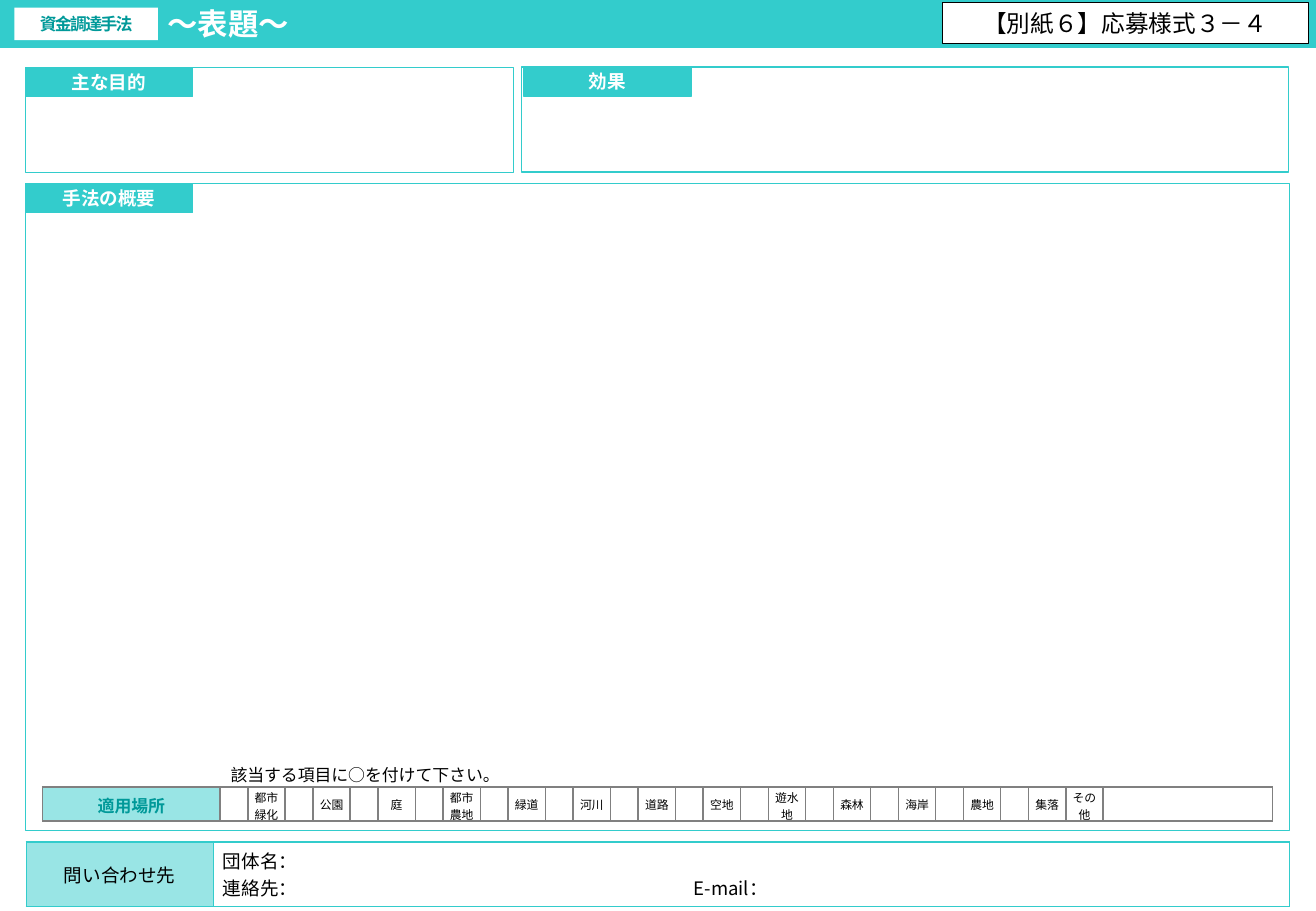
from lxml import etree
from pptx import Presentation
from pptx.dml.color import RGBColor
from pptx.enum.shapes import MSO_SHAPE
from pptx.enum.text import MSO_ANCHOR, PP_ALIGN
from pptx.oxml.ns import qn
from pptx.util import Cm, Pt

RECTANGLE = MSO_SHAPE.RECTANGLE
MIDDLE = MSO_ANCHOR.MIDDLE
LEFT, CENTER = PP_ALIGN.LEFT, PP_ALIGN.CENTER
FONT = "Noto Sans CJK JP"
TURQUOISE = RGBColor(0x33, 0xCC, 0xCC)
PALE = RGBColor(0x99, 0xE5, 0xE5)
TEAL = RGBColor(0x00, 0x99, 0x99)
GREY = RGBColor(0x80, 0x80, 0x80)
WHITE = RGBColor(0xFF, 0xFF, 0xFF)
BLACK = RGBColor(0x00, 0x00, 0x00)

TITLE = "～表題～"
CATEGORY = "資金調達手法"
FORM_NUMBER = "【別紙６】応募様式３－４"
SECTIONS = [
    ("主な目的", (0.53, 1.41, 10.21, 2.2), 0.53),
    ("効果", (10.91, 1.4, 16.03, 2.2), 10.95),
    ("手法の概要", (0.54, 3.84, 26.42, 13.53), 0.53),
]
HINT = "該当する項目に○を付けて下さい。"
PLACES_LABEL = "適用場所"
PLACES = ["都市\n緑化", "公園", "庭", "都市\n農地", "緑道", "河川", "道路",
          "空地", "遊水地", "森林", "海岸", "農地", "集落"]
OTHER = "その\n他"
CONTACT_LABEL = "問い合わせ先"
CONTACT = "団体名：\n連絡先：\tE-mail："

LABEL_W, LABEL_H = 3.5, 0.61
PLACES_LABEL_W, MARK_W, PLACE_W, OTHER_W = 3.71, 0.58, 0.78, 3.54
LABEL_INSETS = (0.2, 0.1, 0.2, 0.1)
PLACE_INSETS = (0.03, 0.03, 0.03, 0)
EMAIL_TAB = 9.84


def write(frame, text, size=11, color=BLACK, bold=False, align=LEFT,
          spacing=None, tab=None):
    frame.word_wrap = True
    for number, line in enumerate(text.split("\n")):
        paragraph = frame.add_paragraph() if number else frame.paragraphs[0]
        paragraph.alignment = align
        if tab:
            stops = etree.SubElement(paragraph._p.get_or_add_pPr(), qn("a:tabLst"))
            etree.SubElement(stops, qn("a:tab"), pos=str(Cm(tab)), algn="l")
        if not line:
            etree.SubElement(paragraph._p, qn("a:endParaRPr"), sz=str(size * 100))
            continue
        run = paragraph.add_run()
        run.text = line
        run.font.name = FONT
        run.font.size = Pt(size)
        run.font.bold = bold
        run.font.color.rgb = color
        properties = run.font._element
        etree.SubElement(properties, qn("a:ea"), typeface=FONT)
        if spacing:
            properties.set("spc", str(spacing * 100))


def set_insets(target, insets):
    (target.margin_left, target.margin_top,
     target.margin_right, target.margin_bottom) = map(Cm, insets)


def add_box(slide, box, fill=WHITE, line=None, width=0.75, text="",
            insets=LABEL_INSETS, **text_format):
    shape = slide.shapes.add_shape(RECTANGLE, *map(Cm, box))
    shape.shadow.inherit = False
    shape.fill.solid()
    shape.fill.fore_color.rgb = fill
    if line is None:
        shape.line.fill.background()
    else:
        shape.line.color.rgb = line
        shape.line.width = Pt(width)
    if text:
        shape.text_frame.vertical_anchor = MIDDLE
        set_insets(shape.text_frame, insets)
        write(shape.text_frame, text, **text_format)


def add_row(slide, left, top, height, widths):
    row = slide.shapes.add_table(
        1, len(widths), Cm(left), Cm(top), Cm(sum(widths)), Cm(height)).table
    row.first_row = False
    row.horz_banding = False
    for column, width in zip(row.columns, widths):
        column.width = Cm(width)
    return row


def fill_cell(cell, text, border, insets, fill=WHITE, **text_format):
    cell.vertical_anchor = MIDDLE
    set_insets(cell, insets)
    write(cell.text_frame, text, **text_format)
    properties = cell._tc.get_or_add_tcPr()
    for side in ("a:lnL", "a:lnR", "a:lnT", "a:lnB"):
        edge = etree.SubElement(properties, qn(side), w=str(Pt(1)))
        paint = etree.SubElement(edge, qn("a:solidFill"))
        etree.SubElement(paint, qn("a:srgbClr"), val=str(border))
    cell.fill.solid()
    cell.fill.fore_color.rgb = fill


def main():
    deck = Presentation()
    deck.slide_width, deck.slide_height = Cm(27.51), Cm(19.05)
    slide = deck.slides.add_slide(deck.slide_layouts[6])

    add_box(slide, (0, 0, 27.51, 0.99), TURQUOISE, TURQUOISE, 1, TITLE,
            (3.5, 0.13, 0.25, 0.13), size=18, color=WHITE, bold=True)
    add_box(slide, (0.3, 0.16, 3, 0.68), text=CATEGORY, insets=(0, 0.13, 0, 0.13),
            size=10, color=TEAL, bold=True, align=CENTER, spacing=-1)
    add_box(slide, (19.7, 0.05, 7.65, 0.86), line=BLACK, text=FORM_NUMBER,
            size=14, align=CENTER)

    for label, panel, label_left in SECTIONS:
        add_box(slide, panel, line=TURQUOISE)
        add_box(slide, (label_left, panel[1], LABEL_W, LABEL_H), TURQUOISE, TURQUOISE,
                text=label, color=WHITE, bold=True, align=CENTER)

    hint = slide.shapes.add_textbox(Cm(4.57), Cm(15.87), Cm(6.15), Cm(0.69))
    write(hint.text_frame, HINT, size=10)

    widths = [PLACES_LABEL_W] + [MARK_W, PLACE_W] * len(PLACES) + [PLACE_W, OTHER_W]
    entries = [entry for place in PLACES for entry in ("", place)] + [OTHER, ""]
    places = add_row(slide, 0.89, 16.46, 0.71, widths)
    fill_cell(places.cell(0, 0), PLACES_LABEL, GREY, PLACE_INSETS, PALE,
              size=10, color=TEAL, bold=True, align=CENTER)
    for column, entry in enumerate(entries, 1):
        fill_cell(places.cell(0, column), entry, GREY, PLACE_INSETS,
                  size=7, align=CENTER)

    contact = add_row(slide, 0.55, 17.61, 1.34, [3.91, 22.5])
    fill_cell(contact.cell(0, 0), CONTACT_LABEL, TURQUOISE, LABEL_INSETS, PALE,
              align=CENTER)
    fill_cell(contact.cell(0, 1), CONTACT, TURQUOISE, LABEL_INSETS, tab=EMAIL_TAB)

    deck.save("out.pptx")


if __name__ == "__main__":
    main()
